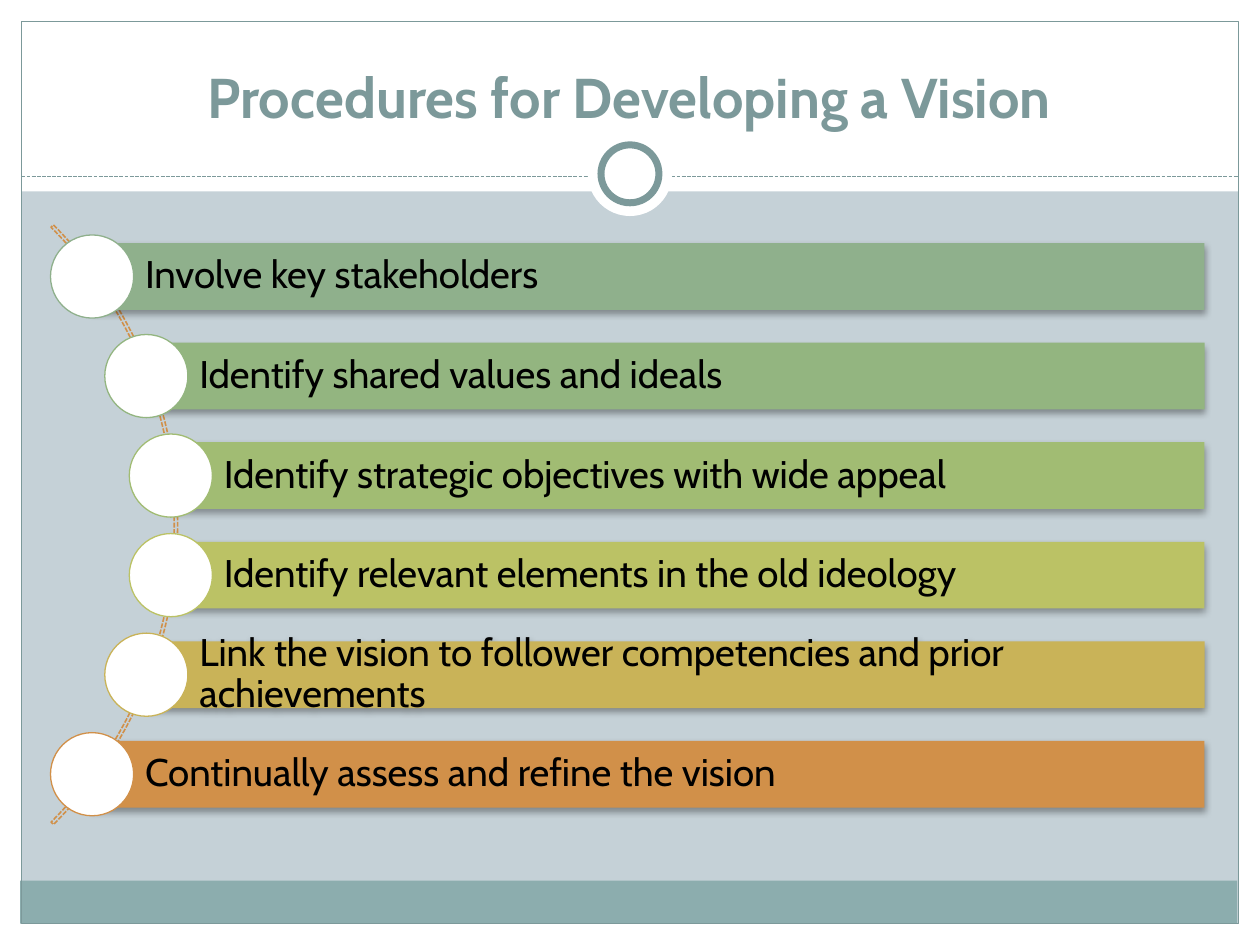
"""Build a slide listing the procedures for developing a vision along an arc."""
from math import sqrt

from lxml.etree import SubElement
from pptx import Presentation
from pptx.dml.color import RGBColor
from pptx.enum.dml import MSO_LINE
from pptx.enum.shapes import MSO_CONNECTOR, MSO_SHAPE
from pptx.enum.text import MSO_ANCHOR, PP_ALIGN
from pptx.oxml.ns import qn
from pptx.util import Inches, Pt

TITLE = "Procedures for Developing a Vision"
STEPS = [
    ("Involve key stakeholders", "8FB08C"),
    ("Identify shared values and ideals", "93B580"),
    ("Identify strategic objectives with wide appeal", "A1BC73"),
    ("Identify relevant elements in the old ideology", "BBC265"),
    ("Link the vision to follower competencies and prior achievements", "C9B358"),
    ("Continually assess and refine the vision", "D19049"),
]
THEME = {
    "font": "Cabin", "title_size": 32, "step_size": 22,
    "background": "C5D1D7", "panel": "FFFFFF", "footer": "8CADAE",
    "accent": "7C999A", "arc": "D19049", "text": "000000",
}
WIDTH, HEIGHT, MARGIN = 10, 7.5, 0.17
HEADER_HEIGHT, RULE_TOP = 1.52, 1.4
PANELS = [
    ((0, HEIGHT - MARGIN, WIDTH, MARGIN), "panel"),
    ((0, 0, WIDTH, HEADER_HEIGHT), "panel"),
    ((0, 0, MARGIN, HEIGHT), "panel"),
    ((WIDTH - MARGIN, 0, MARGIN, HEIGHT), "panel"),
    ((0.16, 6.99, 9.66, 0.34), "footer"),
]
ARC_BOX, ARC_ADJUSTMENTS = (-5.32, 0.8, 6.73, 6.73), (189, 27, 0.004)
ARC_CENTER_X, ARC_CENTER_Y, STEP_RADIUS = -1.95, 4.17, 3.33
STEP_PITCH, BAR_HEIGHT, BAR_RIGHT, CIRCLE_SIZE = 0.79, 0.53, 9.56, 0.66
STEP_FRAME = {
    "word_wrap": True, "vertical_anchor": MSO_ANCHOR.MIDDLE,
    "margin_left": Inches(0.42), "margin_right": Inches(0.06),
    "margin_top": Inches(0.06), "margin_bottom": Inches(0.06),
}
TITLE_FRAME = {"word_wrap": True, "vertical_anchor": MSO_ANCHOR.BOTTOM}


def apply_format(target, values):
    """Set every named attribute on the target."""
    for name, value in values.items():
        setattr(target, name, value)


def style_line(line, color, width, dash=None):
    """Give a line its colour, width and dash."""
    line.color.rgb = RGBColor.from_string(color)
    apply_format(line, {"width": Pt(width), "dash_style": dash})


def add_shape(slide, kind, box, fill=None, line=None):
    """Add a flat preset shape with an optional fill and line."""
    shape = slide.shapes.add_shape(kind, *map(Inches, box))
    shape.shadow.inherit = False
    if fill:
        shape.fill.solid()
        shape.fill.fore_color.rgb = RGBColor.from_string(fill)
    else:
        shape.fill.background()
    if line:
        style_line(shape.line, *line)
    else:
        shape.line.fill.background()
    return shape


def add_centered_circle(slide, center_x, center_y, size, line=None):
    """Add a white circle around a point."""
    box = (center_x - size / 2, center_y - size / 2, size, size)
    add_shape(slide, MSO_SHAPE.OVAL, box, THEME["panel"], line)


def write_text(shape, text, frame_format, paragraph_format, font_format, color):
    """Write one formatted paragraph in a shape."""
    frame = shape.text_frame
    paragraph = frame.paragraphs[0]
    run = paragraph.add_run()
    run.text = text
    apply_format(frame, frame_format)
    apply_format(paragraph, paragraph_format)
    apply_format(run.font, {"name": THEME["font"], **font_format})
    run.font.color.rgb = RGBColor.from_string(color)


def add_drop_shadow(shape):
    """Put a soft shadow just below a shape."""
    effects = shape._element.spPr.find(qn("a:effectLst"))
    shadow = SubElement(effects, qn("a:outerShdw"), blurRad=str(Pt(4)),
                        dist=str(Pt(2)), dir="5400000", rotWithShape="0")
    color = SubElement(shadow, qn("a:srgbClr"), val="000000")
    SubElement(color, qn("a:alpha"), val="35000")


def add_header(slide):
    """Add the panels, frame, dashed rule, ring and title."""
    for box, color in PANELS:
        add_shape(slide, MSO_SHAPE.RECTANGLE, box, THEME[color])
    frame_box = (MARGIN, MARGIN, WIDTH - 2 * MARGIN, HEIGHT - 2 * MARGIN)
    add_shape(slide, MSO_SHAPE.RECTANGLE, frame_box, line=(THEME["accent"], 0.75))
    ends = map(Inches, (MARGIN, RULE_TOP, WIDTH - MARGIN, RULE_TOP))
    rule = slide.shapes.add_connector(MSO_CONNECTOR.STRAIGHT, *ends)
    style_line(rule.line, THEME["accent"], 0.75, MSO_LINE.SQUARE_DOT)
    SubElement(rule._element.spPr, qn("a:effectLst"))
    add_centered_circle(slide, WIDTH / 2, 1.38, 0.67)
    add_centered_circle(slide, WIDTH / 2, 1.38, 0.46, (THEME["accent"], 4))
    title = slide.shapes.add_textbox(*map(Inches, (0.33, 0.25, 9.33, 0.83)))
    write_text(title, TITLE, TITLE_FRAME, {"alignment": PP_ALIGN.CENTER},
               {"size": Pt(THEME["title_size"]), "bold": True}, THEME["accent"])


def add_steps(slide):
    """Add the arc with one bar and circle for each step."""
    arc = add_shape(slide, MSO_SHAPE.BLOCK_ARC, ARC_BOX,
                    line=(THEME["arc"], 0.9, MSO_LINE.SQUARE_DOT))
    for index, value in enumerate(ARC_ADJUSTMENTS):
        arc.adjustments[index] = value
    for index, (text, color) in enumerate(STEPS):
        offset = (index - (len(STEPS) - 1) / 2) * STEP_PITCH
        center_x = ARC_CENTER_X + sqrt(STEP_RADIUS ** 2 - offset ** 2)
        center_y = ARC_CENTER_Y + offset
        box = (center_x, center_y - BAR_HEIGHT / 2, BAR_RIGHT - center_x, BAR_HEIGHT)
        bar = add_shape(slide, MSO_SHAPE.RECTANGLE, box, color)
        add_drop_shadow(bar)
        write_text(bar, text, STEP_FRAME,
                   {"alignment": PP_ALIGN.LEFT, "line_spacing": 0.9},
                   {"size": Pt(THEME["step_size"])}, THEME["text"])
        add_centered_circle(slide, center_x, center_y, CIRCLE_SIZE, (color, 0.75))


def main():
    """Build and save the presentation."""
    presentation = Presentation()
    apply_format(presentation, {"slide_width": Inches(WIDTH),
                                "slide_height": Inches(HEIGHT)})
    slide = presentation.slides.add_slide(presentation.slide_layouts[6])
    slide.background.fill.solid()
    slide.background.fill.fore_color.rgb = RGBColor.from_string(THEME["background"])
    add_header(slide)
    add_steps(slide)
    presentation.save("out.pptx")


if __name__ == "__main__":
    main()
